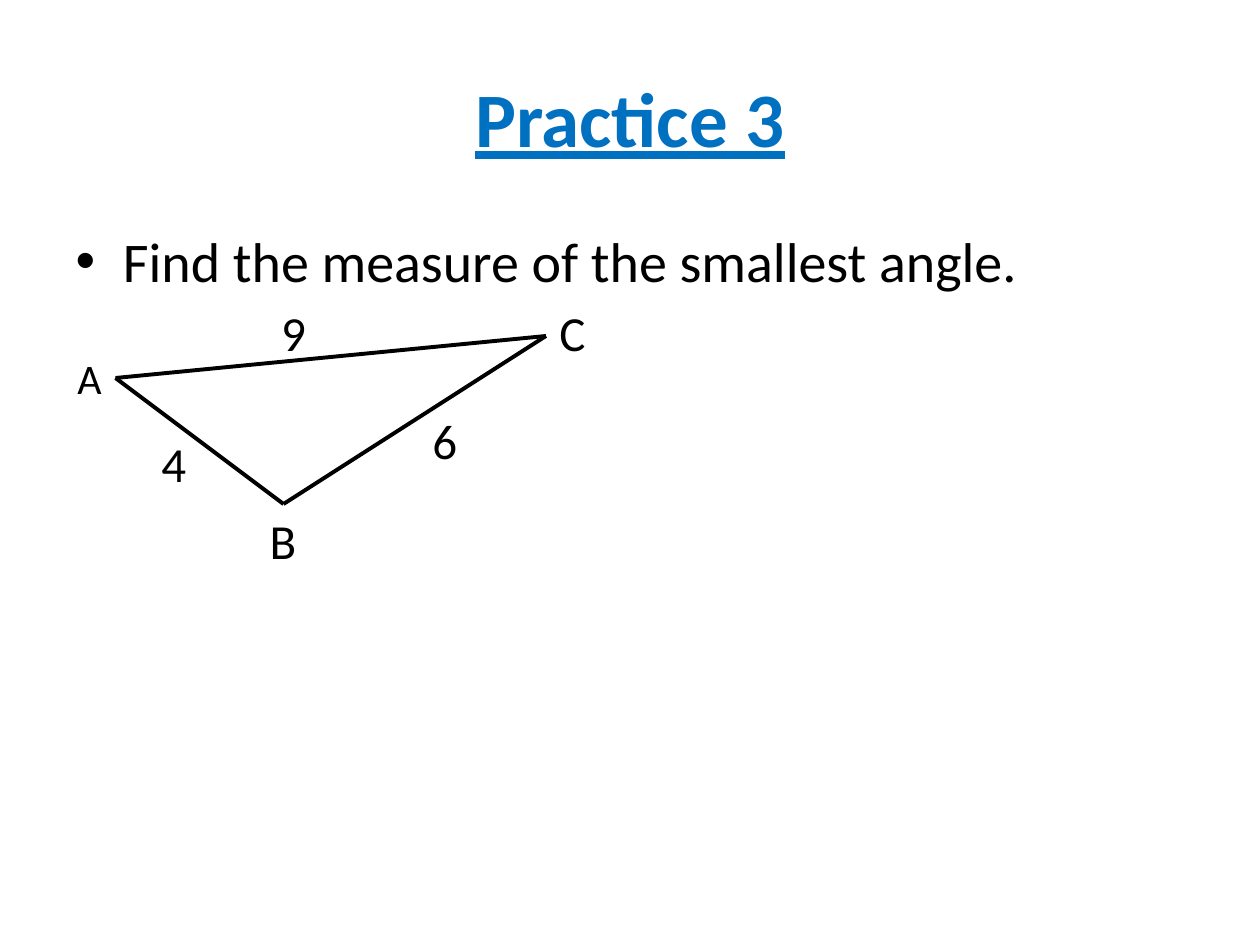
"""Build a practice slide about the smallest angle of triangle ABC."""
from itertools import combinations

from lxml.etree import SubElement
from pptx import Presentation
from pptx.dml.color import RGBColor
from pptx.enum.shapes import MSO_CONNECTOR as Connector
from pptx.enum.text import MSO_ANCHOR as Anchor, MSO_AUTO_SIZE as AutoSize, PP_ALIGN as Align
from pptx.oxml.ns import qn
from pptx.util import Inches, Pt

COLORS = {"title": "0070C0", "ink": "000000"}
COLUMNS = 120

deck = Presentation()
deck.slide_width, deck.slide_height = Inches(10), Inches(7.5)
page = deck.slides.add_slide(deck.slide_layouts[1])
cell = deck.slide_width / COLUMNS


def grid(*counts):
    return [round(count * cell) for count in counts]


def write(box, text, size, color):
    box.text_frame.text = text
    para = box.text_frame.paragraphs[0]
    para.font.name = "Calibri"
    para.font.size = Pt(size)
    para.font.color.rgb = RGBColor.from_string(COLORS[color])
    return para


title, body = page.shapes.title, page.placeholders[1]
title.left, title.top, title.width, title.height = grid(6, 3.6, 108, 15)
title.text_frame.vertical_anchor = Anchor.MIDDLE
heading = write(title, "Practice 3", 44, "title")
heading.alignment = Align.CENTER
heading.font.bold = heading.font.underline = True

body.left, body.top, body.width, body.height = grid(6, 21, 108, 59.4)
write(body, "Find the measure of the smallest angle.", 32, "ink")

corners = {"A": (11, 36), "B": (27, 48), "C": (52, 32)}
for start, end in combinations(corners.values(), 2):
    side = page.shapes.add_connector(Connector.STRAIGHT, *grid(*start, *end))
    side.line.color.rgb = RGBColor.from_string(COLORS["ink"])
    side.line.width = Pt(2.25)
    SubElement(side._element.spPr, qn("a:effectLst"))

labels = [
    ("A", 6.2, 33, 24),
    ("B", 24.5, 48, 28),
    ("C", 52.1, 28.2, 28),
    ("4", 14.2, 40.7, 28),
    ("6", 40, 38.5, 28),
    ("9", 25.6, 28.2, 28),
]
for text, column, row, size in labels:
    box = page.shapes.add_textbox(*grid(column, row, 4.8, size / 4.1))
    box.text_frame.word_wrap = False
    box.text_frame.auto_size = AutoSize.SHAPE_TO_FIT_TEXT
    write(box, text, size, "ink")

deck.save("out.pptx")
